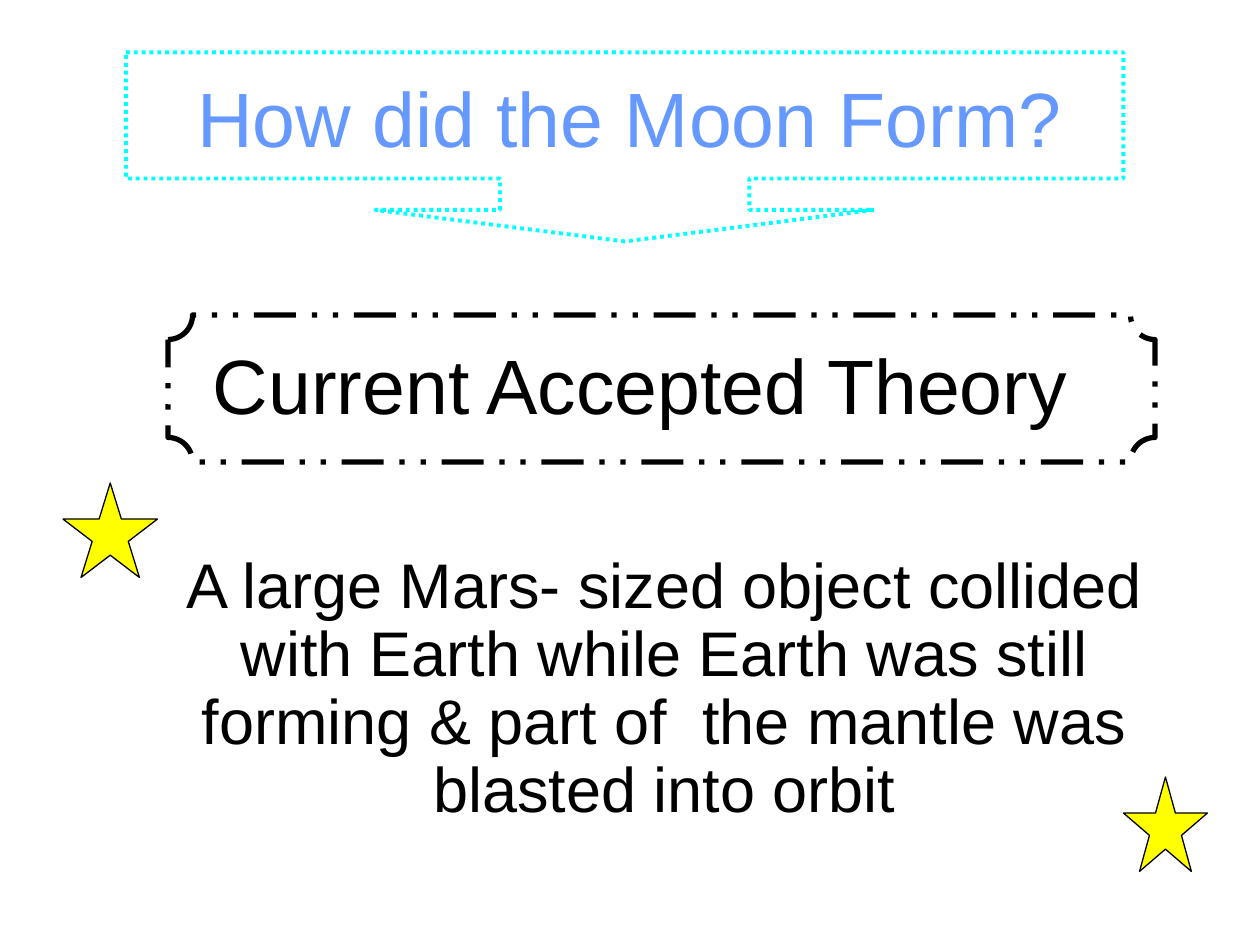
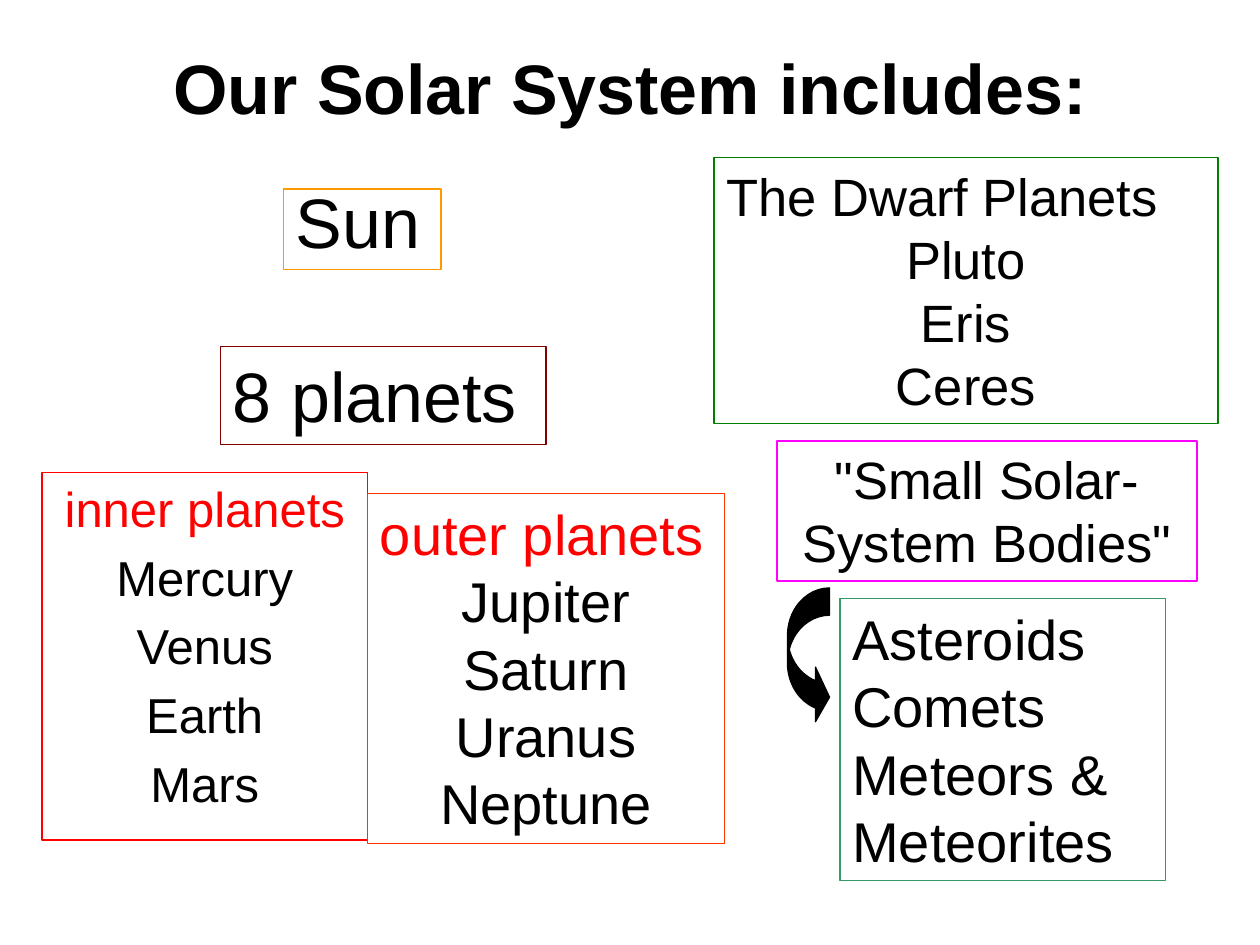
from dataclasses import dataclass

from pptx import Presentation
from pptx.dml.color import RGBColor
from pptx.enum import dml, shapes, text
from pptx.util import Pt

LEFT, CENTER = text.PP_ALIGN.LEFT, text.PP_ALIGN.CENTER
TOP, MIDDLE = text.MSO_ANCHOR.TOP, text.MSO_ANCHOR.MIDDLE
SHAPE, DASH = shapes.MSO_SHAPE, dml.MSO_LINE


@dataclass(frozen=True)
class Theme:
    font: str = "Arial"
    black: str = "000000"
    sky: str = "6699FF"
    cyan: str = "00FFFF"
    yellow: str = "FFFF00"
    red: str = "FF0000"
    scarlet: str = "FF3300"
    maroon: str = "800000"
    orange: str = "FF9900"
    green: str = "008000"
    teal: str = "339966"
    magenta: str = "FF00FF"
    banner: int = 44
    title: int = 40
    body: int = 36
    large_list: int = 32
    medium_list: int = 30
    small_list: int = 28
    hairline: float = 0.75


THEME = Theme()


def write(p, words, *, size, color=THEME.black, bold=False, align=LEFT,
          before=0, spacing=1.0):
    p.alignment = align
    p.space_before = Pt(before)
    p.line_spacing = spacing
    r = p.add_run()
    r.text = words
    r.font.name = THEME.font
    r.font.size = Pt(size)
    r.font.bold = bold
    r.font.color.rgb = RGBColor.from_string(color)


class Deck:
    def __init__(self, theme):
        self.theme = theme
        self.prs = Presentation()
        self.prs.slide_width, self.prs.slide_height = Pt(720), Pt(540)
        self.s = None

    def new_slide(self):
        self.s = self.prs.slides.add_slide(self.prs.slide_layouts[6])

    def outline(self, sp, color, width=THEME.hairline, dash=None):
        sp.line.color.rgb = RGBColor.from_string(color)
        sp.line.width = Pt(width)
        if dash:
            sp.line.dash_style = dash

    def shape(self, kind, at, line=THEME.black, fill=None, adjust=(), **line_format):
        sp = self.s.shapes.add_shape(kind, *map(Pt, at))
        sp.shadow.inherit = False
        for i, value in enumerate(adjust):
            sp.adjustments[i] = value
        if fill:
            sp.fill.solid()
            sp.fill.fore_color.rgb = RGBColor.from_string(fill)
        else:
            sp.fill.background()
        self.outline(sp, line, **line_format)

    def text(self, at, lines, border=None, anchor=TOP, first=None, **fmt):
        """Write one paragraph per line; first overrides the format of the first."""
        sp = self.s.shapes.add_textbox(*map(Pt, at))
        if border:
            self.outline(sp, border)
        tf = sp.text_frame
        tf.word_wrap = True
        tf.vertical_anchor = anchor
        for i, words in enumerate(lines):
            p = tf.add_paragraph() if i else tf.paragraphs[0]
            write(p, words, **(fmt if i else {**fmt, **(first or {})}))
        return tf

    def title(self, at, words, **fmt):
        self.text(at, [words], anchor=MIDDLE, align=CENTER, **fmt)

    def star(self, at):
        self.shape(SHAPE.STAR_5_POINT, at, fill=self.theme.yellow)


def moon_slide(deck):
    t = deck.theme
    deck.new_slide()
    deck.title((42, 186, 648, 66), "Current Accepted Theory", size=t.banner)
    theory = deck.text(
        (42, 276, 648, 222),
        ["A large Mars- sized object collided with Earth while Earth was still "
         "forming & part of  the mantle was blasted into orbit"],
        size=t.body, align=CENTER, spacing=0.9)
    theory.margin_top = Pt(40.5)
    theory.margin_left = Pt(34.2)
    deck.shape(SHAPE.PLAQUE, (96, 180, 564, 84), adjust=[0.167],
               width=3, dash=DASH.DASH_DOT_DOT)
    deck.star((36, 276, 54, 54))
    deck.star((642, 444, 48, 54))
    deck.title((36, 21.6, 648, 90), "How did the Moon Form?",
               size=t.banner, color=t.sky)
    deck.shape(SHAPE.DOWN_ARROW_CALLOUT, (72, 30, 570, 108), line=t.cyan,
               adjust=[1.319, 1.319, 0.167, 0.667], width=2.25, dash=DASH.ROUND_DOT)


def solar_system_slide(deck):
    t = deck.theme
    deck.new_slide()
    deck.title((36, 21.6, 648, 56), "Our Solar System includes:",
               size=t.title, bold=True)
    deck.text((24, 270, 186, 210),
              ["inner planets", "Mercury", "Venus", "Earth", "Mars"],
              border=t.red, size=t.small_list, align=CENTER, before=5.6,
              first={"color": t.red, "before": 0})
    deck.text((408, 90, 288, 152), ["The Dwarf Planets", "Pluto", "Eris", "Ceres"],
              border=t.green, size=t.medium_list, align=CENTER, first={"align": LEFT})
    deck.text((162, 108, 90, 46), ["Sun"], border=t.orange, size=t.title, spacing=0.8)
    deck.text((126, 198, 186, 56), ["8 planets"], border=t.maroon, size=t.title)
    deck.text((210, 282, 204, 200),
              ["outer planets", "Jupiter", "Saturn", "Uranus", "Neptune"],
              border=t.scarlet, size=t.large_list, align=CENTER,
              first={"color": t.red, "align": LEFT})
    deck.text((480, 342, 186, 161), ["Asteroids", "Comets", "Meteors & Meteorites"],
              border=t.teal, size=t.large_list)
    deck.text((444, 252, 240, 80), ['"Small Solar-System Bodies"'],
              border=t.magenta, size=t.medium_list, align=CENTER)
    deck.shape(SHAPE.CURVED_RIGHT_ARROW, (450, 336, 24, 78), fill=t.black,
               adjust=[0.65, 1.3, 0.333])


def main():
    deck = Deck(THEME)
    moon_slide(deck)
    solar_system_slide(deck)
    deck.prs.save("out.pptx")


if __name__ == "__main__":
    main()
